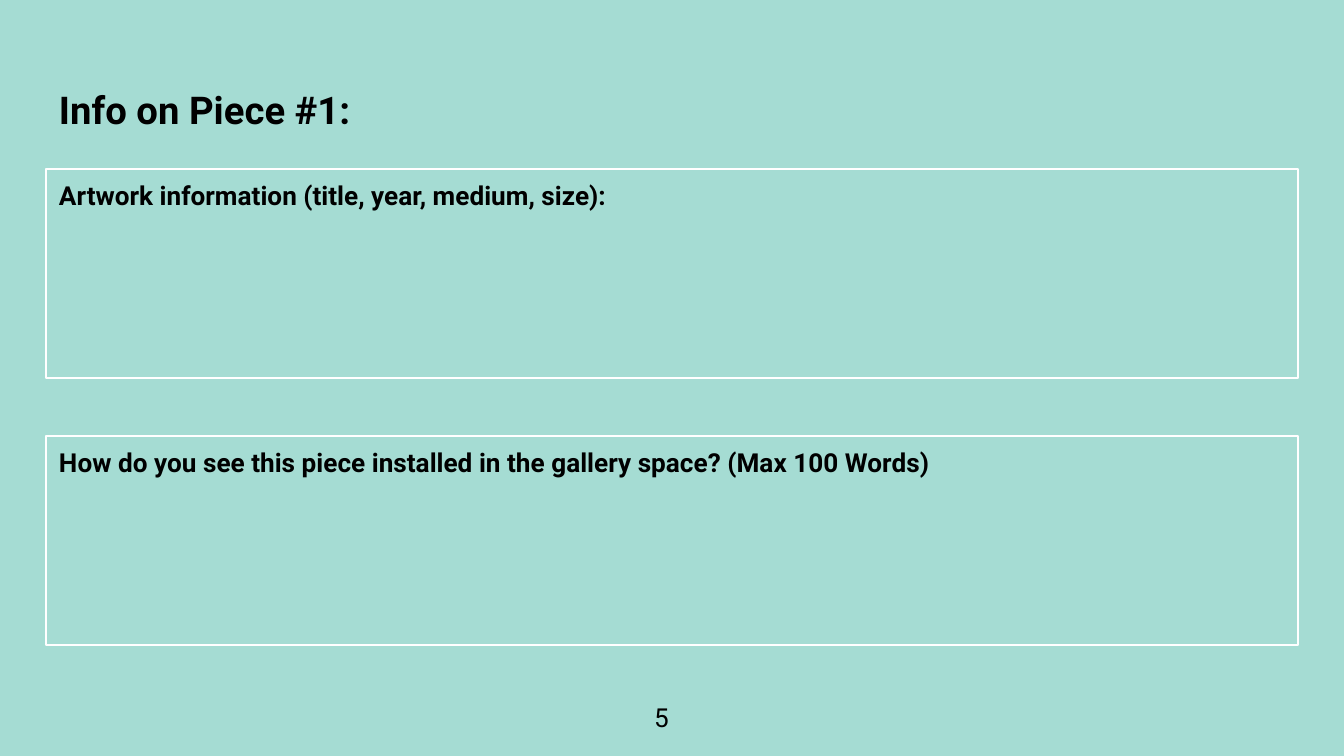
from pptx import Presentation
from pptx.dml.color import RGBColor
from pptx.enum.shapes import MSO_SHAPE
from pptx.enum.text import MSO_ANCHOR, PP_ALIGN
from pptx.util import Emu, Pt

SLIDE_WIDTH, SLIDE_HEIGHT = 1344, 756
EMU_PER_PX = 9144000 / SLIDE_WIDTH
LEFT, WIDTH = 46, 1252
PANEL_TOP, PANEL_HEIGHT, PANEL_GAP = 169, 209, 58
INSET = 13
BACKGROUND, INK, OUTLINE = "A5DCD3", "000000", "FFFFFF"
FONT = "Roboto"
QUESTIONS = [
    "Artwork information (title, year, medium, size):",
    "How do you see this piece installed in the gallery space? (Max 100 Words)",
]


def px(length):
    return Emu(round(length * EMU_PER_PX))


def color(value):
    return RGBColor.from_string(value)


def write_text(box, text, size=14, bold=False, align=PP_ALIGN.LEFT,
               line_spacing=1.0, space_after=0):
    frame = box.text_frame
    frame.word_wrap = True
    frame.vertical_anchor = MSO_ANCHOR.TOP
    frame.margin_left = frame.margin_right = px(INSET)
    frame.margin_top = frame.margin_bottom = px(INSET)
    para = frame.paragraphs[0]
    para.alignment = align
    para.line_spacing = line_spacing
    para.space_after = Pt(space_after)
    span = para.add_run()
    span.text = text
    span.font.name = FONT
    span.font.size = Pt(size)
    span.font.bold = bold
    span.font.color.rgb = color(INK)


def add_label(page, text, left, top, width, height, **text_format):
    box = page.shapes.add_textbox(px(left), px(top), px(width), px(height))
    write_text(box, text, **text_format)


def add_panel(page, question, top):
    panel = page.shapes.add_shape(
        MSO_SHAPE.RECTANGLE, px(LEFT), px(top), px(WIDTH), px(PANEL_HEIGHT))
    panel.shadow.inherit = False
    panel.fill.background()
    panel.line.color.rgb = color(OUTLINE)
    panel.line.width = Pt(0.75)
    write_text(panel, question, bold=True, line_spacing=0.95)


def main():
    deck = Presentation()
    deck.slide_width, deck.slide_height = px(SLIDE_WIDTH), px(SLIDE_HEIGHT)
    page = deck.slides.add_slide(deck.slide_layouts[6])
    page.background.fill.solid()
    page.background.fill.fore_color.rgb = color(BACKGROUND)

    add_label(page, "Info on Piece #1:", LEFT, 66, WIDTH, 85,
              size=20.5, bold=True, line_spacing=1.15, space_after=12)
    for index, question in enumerate(QUESTIONS):
        add_panel(page, question, PANEL_TOP + index * (PANEL_HEIGHT + PANEL_GAP))
    add_label(page, "5", 310, 688, 703, 59, align=PP_ALIGN.CENTER)

    deck.save("out.pptx")


if __name__ == "__main__":
    main()
